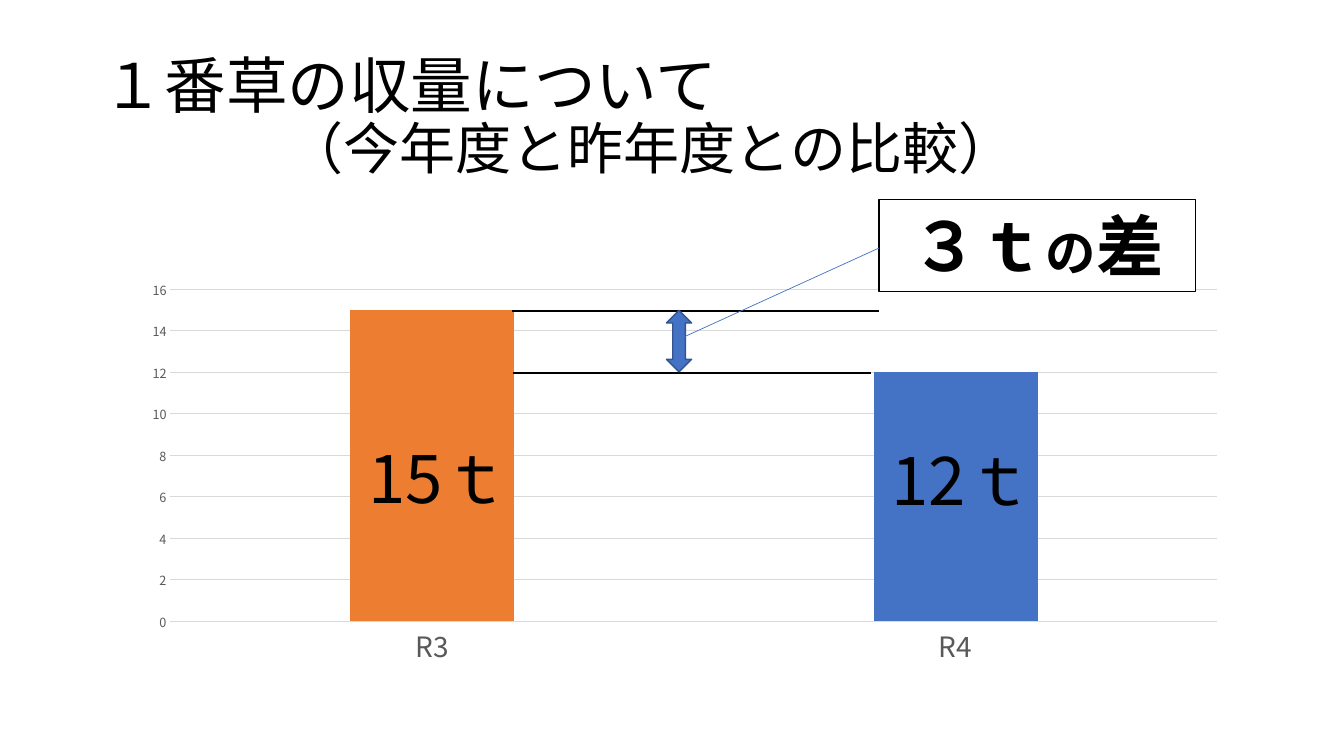
from lxml import etree
from pptx import Presentation
from pptx import util as u
from pptx.chart.data import CategoryChartData
from pptx.dml.color import RGBColor
from pptx.enum import chart as ch, shapes, text
from pptx.oxml import parse_xml
from pptx.oxml.ns import nsdecls, qn

COLORS = {
    "ink": "000000", "paper": "FFFFFF", "axis": "595959", "grid": "D9D9D9",
    "last_year": "ED7D31", "this_year": "4472C4", "arrow_edge": "325491",
}
FONT, TITLE_FONT = "Noto Sans CJK JP", "Arial"
PLOT_AREA = {"x": 0.067, "y": 0.183, "w": 0.903, "h": 0.692}


def color(name):
    return RGBColor.from_string(COLORS[name])


class YieldSlide:
    def __init__(self, prs):
        self.slide = prs.slides.add_slide(prs.slide_layouts[5])
        self.shapes = self.slide.shapes

    def style(self, font, size, ink="ink", bold=False, name=FONT):
        font.name, font.size, font.bold = name, u.Pt(size), bold
        font.color.rgb = color(ink)

    def add_runs(self, paragraph, pieces, bold=False, name=FONT):
        """Add one run for each (wording, size) pair."""
        for wording, size in pieces:
            run = paragraph.add_run()
            run.text = wording
            self.style(run.font, size, bold=bold, name=name)
            east_asian = etree.SubElement(run._r.get_or_add_rPr(), qn("a:ea"))
            east_asian.set("typeface", FONT)

    def outline(self, line, name, width):
        line.color.rgb, line.width = color(name), u.Pt(width)

    def title(self, heading, subheading, indent):
        title = self.shapes.title
        title.left, title.top = u.Inches(0.92), u.Inches(0.45)
        title.width, title.height = u.Inches(11.5), u.Inches(1.45)
        frame = title.text_frame
        frame.auto_size = text.MSO_AUTO_SIZE.NONE
        frame.vertical_anchor = text.MSO_ANCHOR.MIDDLE
        first, second = frame.paragraphs[0], frame.add_paragraph()
        for paragraph, piece in ((first, (heading, 44)), (second, (subheading, 40))):
            paragraph.alignment = text.PP_ALIGN.LEFT
            paragraph.line_spacing = 0.9
            self.add_runs(paragraph, [piece], name=TITLE_FONT)
        second._p.get_or_add_pPr().set("marL", str(u.Inches(indent)))

    def column_chart(self, harvests, x, y, w, h):
        data = CategoryChartData()
        data.categories = list(harvests)
        data.add_series("Series 1", list(harvests.values()))
        chart = self.shapes.add_chart(
            ch.XL_CHART_TYPE.COLUMN_CLUSTERED,
            *map(u.Inches, (x, y, w, h)), data).chart
        chart.has_legend = chart.has_title = False
        self.style(chart.font, 10)

        plot = chart.plots[0]
        plot.gap_width, plot.overlap, plot.vary_by_categories = 219, -27, False
        columns = plot.series[0]
        for fill, name in ((columns.format.fill, "last_year"),
                           (columns.points[1].format.fill, "this_year")):
            fill.solid()
            fill.fore_color.rgb = color(name)

        years, tonnes = chart.category_axis, chart.value_axis
        for axis, size in ((years, 20), (tonnes, 9)):
            axis.major_tick_mark = axis.minor_tick_mark = ch.XL_TICK_MARK.NONE
            self.style(axis.tick_labels.font, size, "axis")
        self.outline(years.format.line, "grid", 0.75)
        tonnes.minimum_scale, tonnes.maximum_scale, tonnes.major_unit = 0, 16, 2
        tonnes.format.line.fill.background()
        self.outline(tonnes.major_gridlines.format.line, "grid", 0.75)
        self.place_plot(chart)

    def place_plot(self, chart):
        """Fix the inner plot area as fractions of the chart frame."""
        modes = "".join(f'<c:{side}Mode val="edge"/>' for side in "xy")
        sizes = "".join(f'<c:{key} val="{part}"/>' for key, part in PLOT_AREA.items())
        layout = parse_xml(
            f'<c:layout {nsdecls("c")}><c:manualLayout><c:layoutTarget val="inner"/>'
            f'{modes}{sizes}</c:manualLayout></c:layout>')
        plot_area = chart._chartSpace.chart.plotArea
        for old in plot_area.findall(qn("c:layout")):
            plot_area.remove(old)
        plot_area.insert(0, layout)

    def line(self, start, end, name="ink", width=1.5, arrow=False):
        connector = self.shapes.add_connector(
            shapes.MSO_CONNECTOR.STRAIGHT, *map(u.Inches, (*start, *end)))
        self.outline(connector.line, name, width)
        properties = connector._element.spPr
        if arrow:
            head = etree.SubElement(properties.find(qn("a:ln")), qn("a:tailEnd"))
            head.set("type", "triangle")
        etree.SubElement(properties, qn("a:effectLst"))

    def shape(self, kind, x, y, w, h, fill, edge):
        shape = self.shapes.add_shape(kind, *map(u.Inches, (x, y, w, h)))
        shape.shadow.inherit = False
        shape.fill.solid()
        shape.fill.fore_color.rgb = color(fill)
        self.outline(shape.line, edge, 1)
        return shape

    def fill_text(self, box, pieces, bold=False):
        frame = box.text_frame
        frame.word_wrap = True
        frame.auto_size = text.MSO_AUTO_SIZE.SHAPE_TO_FIT_TEXT
        frame.vertical_anchor = text.MSO_ANCHOR.TOP
        frame.paragraphs[0].alignment = text.PP_ALIGN.CENTER
        self.add_runs(frame.paragraphs[0], pieces, bold)

    def label(self, wording, x, y):
        box = self.shapes.add_textbox(*map(u.Inches, (x, y, 1.65, 0.91)))
        self.fill_text(box, [(wording, 48)])


def main():
    prs = Presentation()
    prs.slide_width, prs.slide_height = u.Inches(13.33), u.Inches(7.5)
    page = YieldSlide(prs)
    page.title("１番草の収量について", "（今年度と昨年度との比較）", indent=1.83)
    page.column_chart({"R3": 15, "R4": 12}, 0.92, 2, 11.5, 4.76)

    page.line((5.08, 3.09), (8.72, 3.09))
    page.line((5.09, 3.7), (8.64, 3.7))
    page.shape(shapes.MSO_SHAPE.UP_DOWN_ARROW, 6.61, 3.08, 0.25, 0.61,
               "this_year", "arrow_edge")
    difference = page.shape(shapes.MSO_SHAPE.RECTANGLE, 8.72, 1.98, 3.14, 0.91,
                            "paper", "ink")
    page.fill_text(difference, [("３ｔ", 48), ("の", 36), ("差", 48)], bold=True)
    page.line((8.72, 2.46), (6.68, 3.39), "this_year", 0.5, arrow=True)

    page.label("12ｔ", 8.72, 4.3)
    page.label("15ｔ", 3.53, 4.28)
    prs.save("out.pptx")


if __name__ == "__main__":
    main()
